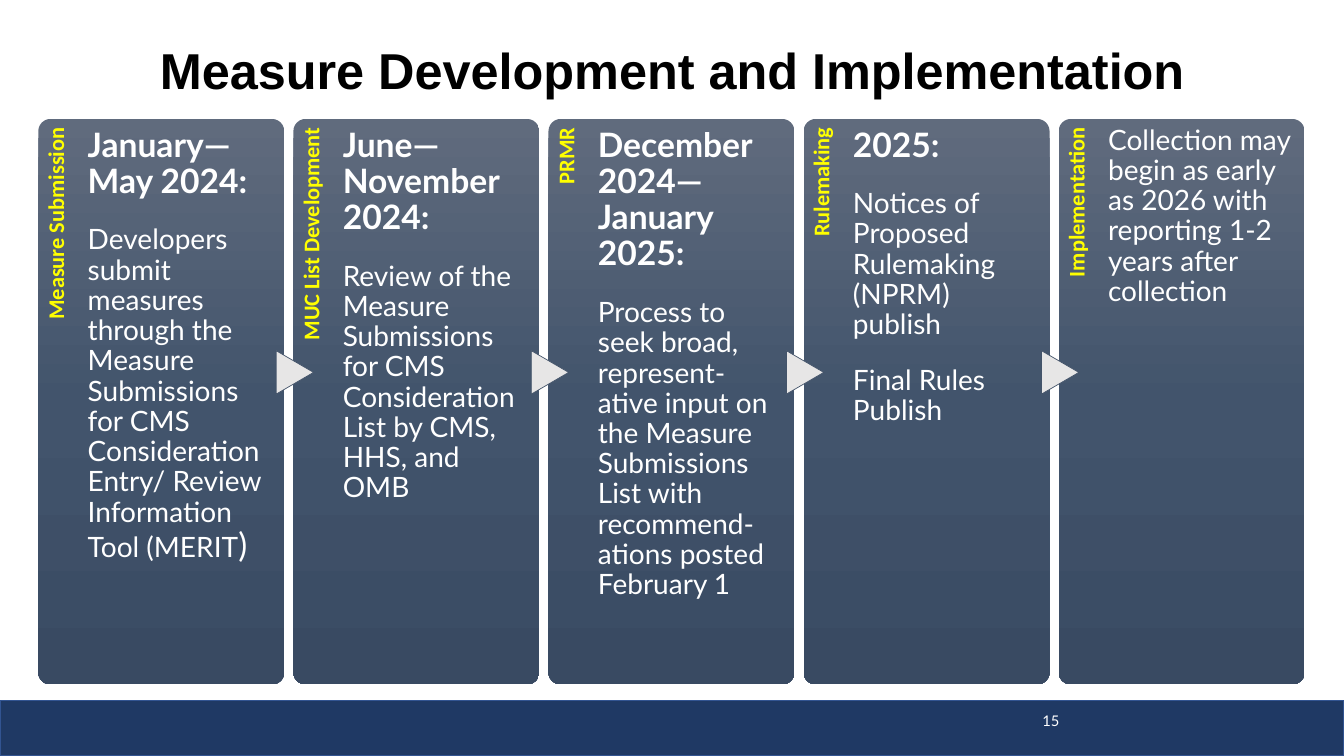
"""Build the measure development and implementation timeline slide."""
from copy import deepcopy
from dataclasses import dataclass

from pptx import Presentation
from pptx.dml.color import RGBColor as RGB
from pptx.enum.shapes import MSO_SHAPE as SHAPE
from pptx.enum.text import MSO_ANCHOR as ANCHOR, PP_ALIGN as ALIGN
from pptx.oxml.ns import qn
from pptx.shapes.autoshape import Shape
from pptx.slide import Slide
from pptx.util import Emu, Pt

PX = 9144
PANEL_LEFT, PANEL_TOP, PANEL_W, PANEL_H, PANEL_PITCH = 38, 118, 244, 561, 253
LABEL_W, LABEL_H, LABEL_CENTRE = 460, 49, 25


@dataclass(frozen=True)
class Theme:
    white: str = "FFFFFF"
    black: str = "000000"
    label: str = "FFFF00"
    footer: str = "1F3964"
    footer_line: str = "325491"
    arrow: str = "E7E6E6"
    arrow_line: str = "44546A"
    panel: tuple[str, ...] = ("606B7D", "42546C", "394A62")
    title_font: str = "Arial"
    label_font: str = "Calibri"
    body_font: str = "Lato"
    title_size: float = 36
    heading_size: float = 24
    body_size: float = 20
    label_size: float = 16
    number_size: float = 10.5


THEME = Theme()


@dataclass(frozen=True)
class Run:
    text: str
    size: float = THEME.body_size
    bold: bool = False
    font: str = THEME.body_font
    color: str = THEME.white


@dataclass(frozen=True)
class Stage:
    label: str
    paragraphs: tuple[tuple[Run, ...], ...]
    inset_top: int = 9


def heading(text: str) -> tuple[Run, ...]:
    return (Run(text, THEME.heading_size, True),)


STAGES = (
    Stage("Measure Submission", (
        heading("January—May 2024:"),
        (Run("Developers submit measures through the Measure Submissions for CMS "
             "Consideration Entry/ Review Information Tool (MERIT"),
         Run(")", THEME.heading_size)))),
    Stage("MUC List Development", (
        heading("June—November 2024:"),
        (Run("Review of the Measure Submissions for CMS Consideration List "
             "by CMS, HHS, and OMB"),))),
    Stage("PRMR", (
        heading("December 2024—January 2025:"),
        (Run("Process to seek broad, represent-ative input on the Measure Submissions "
             "List with recommend-ations posted February 1"),))),
    Stage("Rulemaking", (
        heading("2025:"),
        (Run("Notices of Proposed Rulemaking (NPRM) publish"),),
        (Run("Final Rules Publish"),))),
    Stage("Implementation", (
        (Run("Collection may begin as early as 2026 with reporting 1-2 years "
             "after collection"),),), 7),
)


def px(*lengths: int) -> list[Emu]:
    return [Emu(n * PX) for n in lengths]


def add_text(s: Slide, box: tuple[int, ...], paragraphs: tuple[tuple[Run, ...], ...],
             align: ALIGN = ALIGN.LEFT, anchor: ANCHOR = ANCHOR.TOP,
             insets: tuple[int, ...] = (10, 5, 10, 5), spacing: float = 0.9) -> Shape:
    sp = s.shapes.add_textbox(*px(*box))
    tf = sp.text_frame
    tf.word_wrap = True
    tf.vertical_anchor = anchor
    tf.margin_left, tf.margin_top, tf.margin_right, tf.margin_bottom = px(*insets)
    for i, runs in enumerate(paragraphs):
        p = tf.add_paragraph() if i else tf.paragraphs[0]
        p.alignment = align
        p.line_spacing = spacing
        p.space_after = Pt(18 if i < len(paragraphs) - 1 else 0)
        for run in runs:
            r = p.add_run()
            r.text = run.text
            r.font.name, r.font.size, r.font.bold = run.font, Pt(run.size), run.bold
            r.font.color.rgb = RGB.from_string(run.color)
    return sp


def add_block(s: Slide, kind: SHAPE, box: tuple[int, ...], fill: str,
              line: str, width: float) -> Shape:
    sp = s.shapes.add_shape(kind, *px(*box))
    sp.shadow.inherit = False
    sp.fill.solid()
    sp.fill.fore_color.rgb = RGB.from_string(fill)
    sp.line.color.rgb = RGB.from_string(line)
    sp.line.width = Pt(width)
    return sp


def add_panel(s: Slide, left: int) -> None:
    sp = s.shapes.add_shape(SHAPE.ROUNDED_RECTANGLE,
                            *px(left, PANEL_TOP, PANEL_W, PANEL_H))
    sp.shadow.inherit = False
    sp.adjustments[0] = 0.05
    sp.line.fill.background()
    sp.fill.gradient()
    sp.fill.gradient_angle = 270
    stops = sp._element.spPr.find(".//" + qn("a:gsLst"))
    stops.append(deepcopy(stops[0]))
    for i, (stop, color) in enumerate(zip(sp.fill.gradient_stops, THEME.panel)):
        stop.position = i / 2
        stop.color.rgb = RGB.from_string(color)


def add_stage(s: Slide, index: int, stage: Stage) -> None:
    left = PANEL_LEFT + index * PANEL_PITCH
    add_panel(s, left)
    label = Run(stage.label, THEME.label_size, True, THEME.label_font, THEME.label)
    label_box = (left + LABEL_CENTRE - LABEL_W // 2, 324, LABEL_W, LABEL_H)
    add_text(s, label_box, ((label,),), ALIGN.RIGHT, insets=(0, 6, 8, 0)).rotation = 270
    if index:
        add_block(s, SHAPE.FLOWCHART_EXTRACT, (left - 20, 351, 43, 37),
                  THEME.arrow, THEME.arrow_line, 0.5).rotation = 90
    add_text(s, (left + 49, PANEL_TOP, 182, PANEL_H), stage.paragraphs,
             insets=(0, stage.inset_top, 0, 0))


def main() -> None:
    prs = Presentation()
    prs.slide_width, prs.slide_height = px(1333, 750)
    s = prs.slides.add_slide(prs.slide_layouts[6])
    add_block(s, SHAPE.RECTANGLE, (0, 695, 1333, 55), THEME.footer, THEME.footer_line, 1)
    title = Run("Measure Development and Implementation", THEME.title_size, True,
                THEME.title_font, THEME.black)
    add_text(s, (92, 41, 1150, 63), ((title,),), ALIGN.CENTER, ANCHOR.MIDDLE)
    add_text(s, (1024, 695, 217, 40), ((Run("15", THEME.number_size),),),
             anchor=ANCHOR.MIDDLE, spacing=1.0)
    for index, stage in enumerate(STAGES):
        add_stage(s, index, stage)
    prs.save("out.pptx")


if __name__ == "__main__":
    main()
